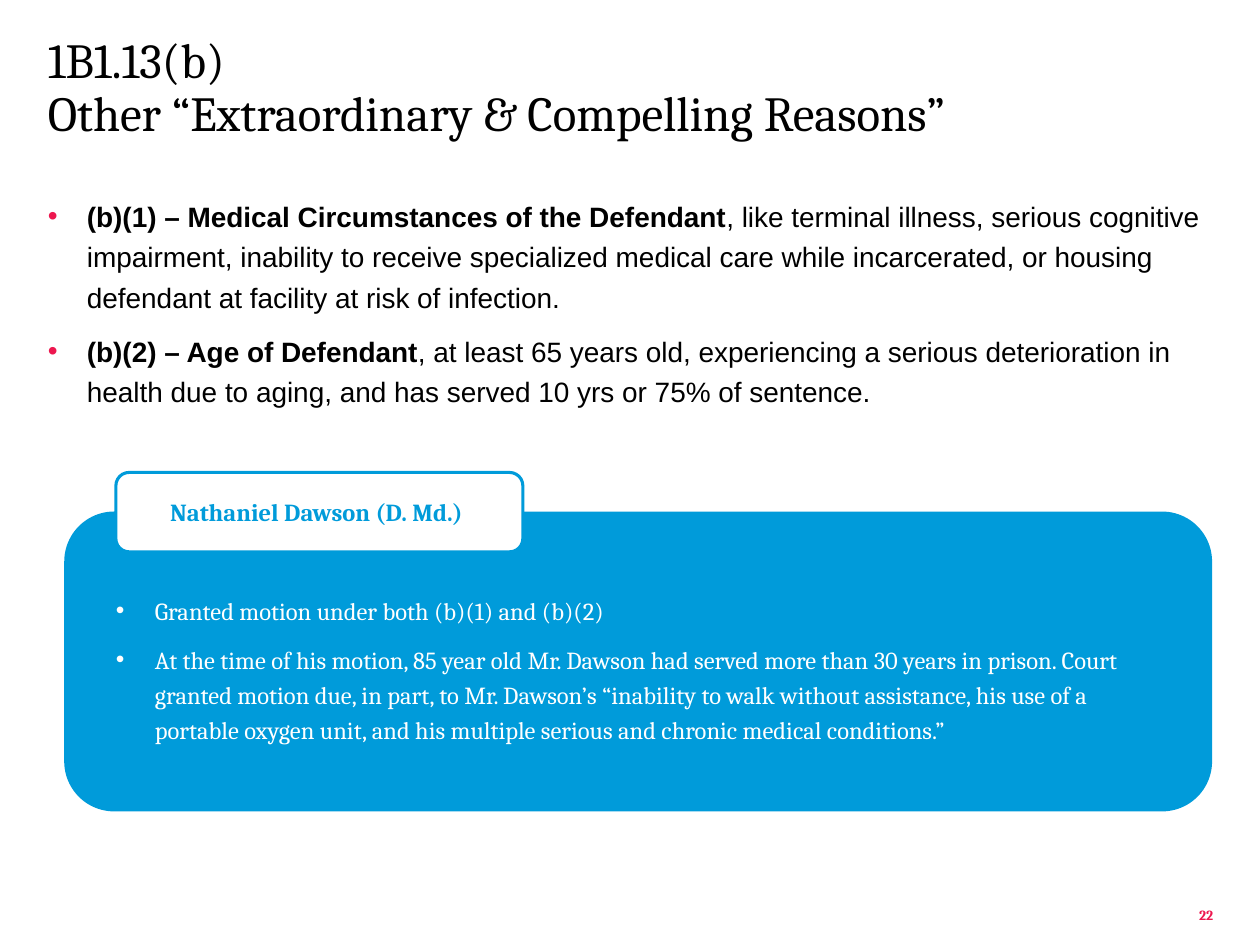
from lxml import etree
from pptx import Presentation
from pptx import util as u
from pptx.dml.color import RGBColor
from pptx.enum import shapes, text
from pptx.oxml.ns import qn

BLUE, PINK, WHITE, BLACK = "009BDA", "ED174F", "FFFFFF", "000000"
SERIF, SANS = "Cambria", "Arial"

HEAD = ["1B1.13(b)", "Other “Extraordinary & Compelling Reasons”"]
RULES = [
    [("(b)(1) – Medical Circumstances of the Defendant", True),
     (", like terminal illness, serious cognitive impairment, inability to "
      "receive specialized medical care while incarcerated, or housing "
      "defendant at facility at risk of infection.", False)],
    [("(b)(2) – Age of Defendant", True),
     (", at least 65 years old, experiencing a serious deterioration in "
      "health due to aging, and has served 10 yrs or 75% of sentence.", False)],
]
NAME = "Nathaniel Dawson (D. Md.) "
FACTS = [
    [("Granted motion under both (b)(1) and (b)(2)", False)],
    [("At the time of his motion, 85 year old Mr. Dawson had served more than "
      "30 years in prison. Court granted motion due, in part, to Mr. Dawson’s "
      "“inability to walk without assistance, his use of a portable oxygen "
      "unit, and his multiple serious and chronic medical conditions.”", False)],
]
PAGE = "22"


def rgb(code):
    return RGBColor.from_string(code)


def spot(*box):
    return [u.Inches(n) for n in box]


def write(para, words, size, face, ink, bold=False):
    run = para.add_run()
    run.text = words
    font = run.font
    font.size, font.name, font.bold = u.Pt(size), face, bold
    font.color.rgb = rgb(ink)


def setup(frame, anchor=text.MSO_ANCHOR.TOP):
    frame.word_wrap = True
    frame.auto_size = text.MSO_AUTO_SIZE.NONE
    frame.vertical_anchor = anchor
    frame.margin_left = frame.margin_right = 0
    frame.margin_top = frame.margin_bottom = 0
    return frame


def bullet(para, ink):
    props = para._p.get_or_add_pPr()
    props.set("marL", str(u.Inches(0.31)))
    props.set("indent", str(-u.Inches(0.31)))
    tint = etree.SubElement(props, qn("a:buClr"))
    etree.SubElement(tint, qn("a:srgbClr"), val=ink)
    etree.SubElement(props, qn("a:buFont"), typeface="Arial")
    etree.SubElement(props, qn("a:buChar"), char="•")


def points(slide, box, items, size, face, ink, dot):
    frame = setup(slide.shapes.add_textbox(*spot(*box)).text_frame)
    for i, runs in enumerate(items):
        para = frame.add_paragraph() if i else frame.paragraphs[0]
        bullet(para, dot)
        para.line_spacing, para.space_after = 1.2, u.Pt(8)
        for words, bold in runs:
            write(para, words, size, face, ink, bold)


def panel(slide, box, fill, line=None):
    kind = shapes.MSO_SHAPE.ROUNDED_RECTANGLE
    shape = slide.shapes.add_shape(kind, *spot(*box))
    shape.shadow.inherit = False
    shape.fill.solid()
    shape.fill.fore_color.rgb = rgb(fill)
    if line:
        shape.line.color.rgb = rgb(line)
        shape.line.width = u.Pt(1.75)
    else:
        shape.line.fill.background()
    return shape


def main():
    deck = Presentation()
    deck.slide_width, deck.slide_height = spot(10, 7.5)
    slide = deck.slides.add_slide(deck.slide_layouts[5])

    title = slide.shapes.title
    title.left, title.top, title.width, title.height = spot(0.38, 0.29, 9.25, 0.85)
    para = setup(title.text_frame).paragraphs[0]
    para.alignment, para.line_spacing = text.PP_ALIGN.LEFT, 0.9
    for i, words in enumerate(HEAD):
        if i:
            para.add_line_break()
        write(para, words, 28, SERIF, BLACK)

    points(slide, (0.38, 1.53, 9.25, 1.91), RULES, 16, SANS, BLACK, PINK)
    panel(slide, (0.51, 4.06, 9.11, 2.38), BLUE)
    points(slide, (0.92, 4.68, 8.06, 1.32), FACTS, 14, SERIF, WHITE, WHITE)

    label = panel(slide, (0.92, 3.75, 3.23, 0.63), WHITE, BLUE)
    para = setup(label.text_frame, text.MSO_ANCHOR.MIDDLE).paragraphs[0]
    para.alignment = text.PP_ALIGN.CENTER
    write(para, NAME, 14, SERIF, BLUE, True)

    foot = slide.shapes.add_textbox(*spot(9.35, 7.12, 0.28, 0.21))
    para = setup(foot.text_frame, text.MSO_ANCHOR.BOTTOM).paragraphs[0]
    para.alignment, para.line_spacing = text.PP_ALIGN.RIGHT, 0.9
    write(para, PAGE, 8, SERIF, PINK, True)

    deck.save("out.pptx")


if __name__ == "__main__":
    main()
